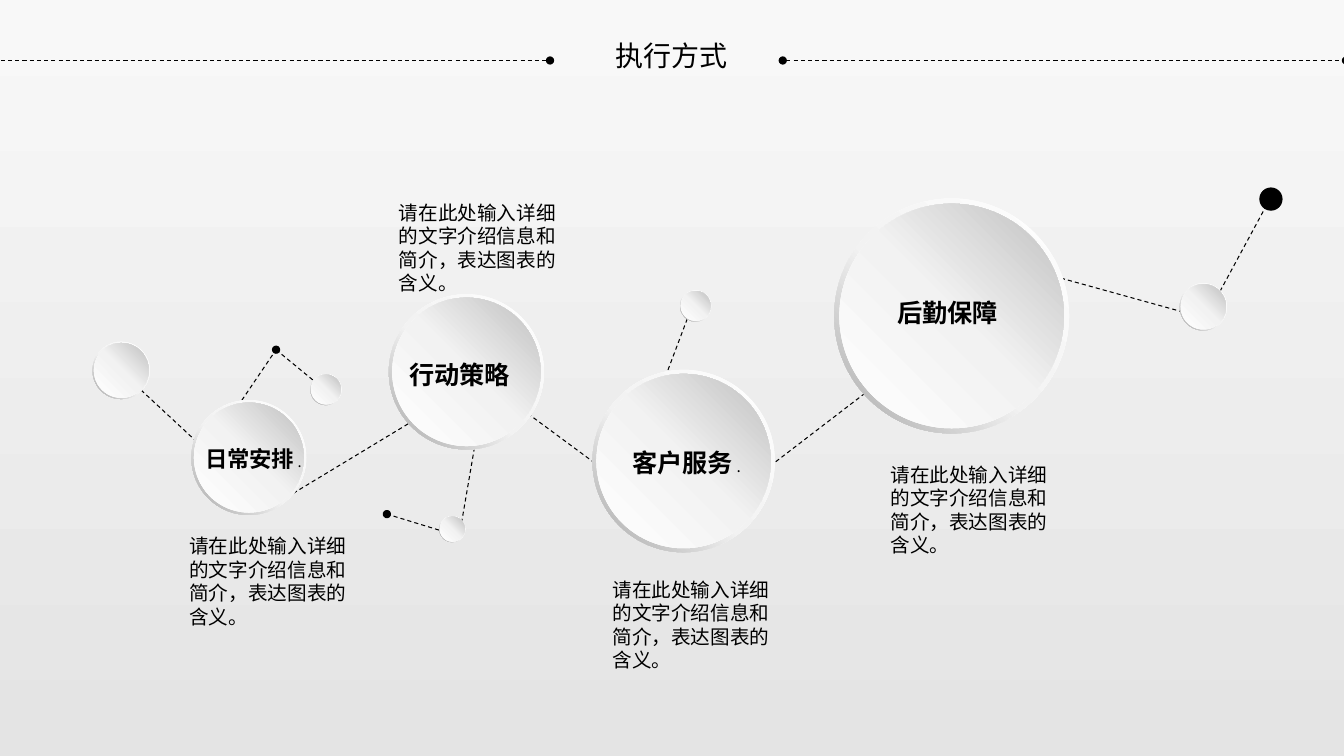
import copy

import pptx
import pptx.dml.color
import pptx.enum.dml
import pptx.enum.shapes
import pptx.enum.text
import pptx.oxml.ns
import pptx.oxml.xmlchemy
import pptx.util

Pt = pptx.util.Pt
qn = pptx.oxml.ns.qn
SHAPES = pptx.enum.shapes.MSO_SHAPE
ALIGN = pptx.enum.text.PP_ALIGN
ANCHOR = pptx.enum.text.MSO_ANCHOR

BLACK = "000000"
RIM = ([(0, "FFFFFF"), (0.55, "F2F2F2"), (1, "A6A6A6")], 135)
FACE = ([(0, "FFFFFF"), (0.51, "F2F2F2"), (1, "BFBFBF")], 315)
CAPTION = "请在此处输入详细的文字介绍信息和简介，表达图表的含义。"


def rgb(value):
    return pptx.dml.color.RGBColor.from_string(value)


def add_xml(parent, tag, **attrs):
    child = pptx.oxml.xmlchemy.OxmlElement(tag)
    for name, value in attrs.items():
        child.set(name, value)
    parent.append(child)


def write_run(p, text, size=14, bold=False, font="Noto Sans CJK SC", color=BLACK):
    r = p.add_run()
    r.text = text
    r.font.size = Pt(size)
    r.font.bold = bold
    r.font.name = font
    r.font.color.rgb = rgb(color)
    add_xml(r._r.get_or_add_rPr(), "a:ea", typeface=font)


def fill_gradient(element, fill, stops, clockwise):
    fill.gradient()
    fill.gradient_angle = (360 - clockwise) % 360
    gs_list = element.find(".//" + qn("a:gsLst"))
    while len(gs_list) < len(stops):
        gs_list.append(copy.deepcopy(gs_list[-1]))
    for stop, (position, color) in zip(fill.gradient_stops, stops):
        stop.position = position
        stop.color.rgb = rgb(color)


class Deck:
    def __init__(self, width, height):
        self.prs = pptx.Presentation()
        self.prs.slide_width, self.prs.slide_height = Pt(width), Pt(height)
        self.s = self.prs.slides.add_slide(self.prs.slide_layouts[6])

    def background(self, stops, clockwise):
        fill_gradient(self.s.element, self.s.background.fill, stops, clockwise)

    def dashed_line(self, x1, y1, x2, y2, dots=False):
        line = self.s.shapes.add_connector(
            pptx.enum.shapes.MSO_CONNECTOR.STRAIGHT, Pt(x1), Pt(y1), Pt(x2), Pt(y2))
        line.line.color.rgb = rgb(BLACK)
        line.line.width = Pt(0.75)
        line.line.dash_style = pptx.enum.dml.MSO_LINE.DASH
        if dots:
            ln = line.element.spPr.find(qn("a:ln"))
            for tag in ("a:headEnd", "a:tailEnd"):
                add_xml(ln, tag, type="oval")
        add_xml(line.element.spPr, "a:effectLst")

    def shape(self, kind, x, y, size, fill):
        sp = self.s.shapes.add_shape(kind, Pt(x), Pt(y), Pt(size), Pt(size))
        sp.shadow.inherit = False
        sp.line.fill.background()
        if isinstance(fill, str):
            sp.fill.solid()
            sp.fill.fore_color.rgb = rgb(fill)
        else:
            fill_gradient(sp.element, sp.fill, *fill)
        return sp

    def bead(self, x, y, size, rim=RIM, face=FACE):
        ring = self.shape(SHAPES.DONUT, x, y, size, rim)
        ring.adjustments[0] = 0.049
        inset = 0.022 * size
        self.shape(SHAPES.OVAL, x + inset, y + inset, size - 2 * inset, face)

    def text(self, x, y, w, h, runs, align=ALIGN.LEFT, anchor=ANCHOR.TOP):
        tf = self.s.shapes.add_textbox(Pt(x), Pt(y), Pt(w), Pt(h)).text_frame
        tf.word_wrap = True
        tf.vertical_anchor = anchor
        p = tf.paragraphs[0]
        p.alignment = align
        p.line_spacing = Pt(1.2 * runs[0][1])
        for text, size, bold in runs:
            write_run(p, text, size=size, bold=bold)


def main():
    deck = Deck(960.48, 540)
    deck.background([(0, "F8F8F8"), (1, "E4E4E4")], 90)

    # Title between two dotted rules
    deck.text(411.8, 20.9, 136.1, 36.7, [("执行方式", 20, False)],
              align=ALIGN.CENTER, anchor=ANCHOR.MIDDLE)
    for x1, x2 in ((-7.2, 393.1), (559.4, 961.9)):
        deck.dashed_line(x1, 43.2, x2, 43.2, dots=True)

    # Links between the beads
    for link in (
        (373, 292.3, 457.9, 355),
        (205.2, 355, 316.1, 288),
        (100.8, 278.6, 140.4, 315.4),
        (197.3, 249.8, 225.4, 272.9),
        (339.1, 319.7, 329.8, 373.7),
        (477.4, 264.2, 491.8, 226.1),
        (554.4, 329.8, 622.1, 277.9),
        (758.2, 198.7, 854.6, 225.4),
        (871.9, 208.1, 905.8, 145.4),
    ):
        deck.dashed_line(*link)
    for link in ((168.5, 292.3, 197.3, 249.8), (321.1, 380.9, 276.5, 367.2)):
        deck.dashed_line(*link, dots=True)

    # Beads: left, top, diameter
    for bead in (
        (66.2, 244.1, 41),
        (221.8, 267.1, 22.3),
        (136.8, 285.8, 82.1),
        (313.9, 368.6, 18.7),
        (277.9, 210.2, 110.9),
        (423.4, 264.2, 130.3),
        (486, 207.4, 22.3),
        (596.2, 141.8, 167.8),
        (843.1, 202.3, 33.8),
    ):
        deck.bead(*bead)
    deck.bead(900, 133.9, 16.6, rim=BLACK, face=BLACK)

    # Bead labels
    for x, y, runs in (
        (121, 314.6, [("日常安排", 16, True), (" .", 10.5, False)]),
        (268.5, 253.4, [("行动策略", 18, True)]),
        (430.6, 316.1, [("客户服务", 18, True), (" .", 11, False)]),
        (617, 208.8, [("后勤保障", 18, True)]),
    ):
        deck.text(x, y, 120.2, 28.8, runs, align=ALIGN.CENTER)

    # Captions
    for x, y in ((128.2, 378), (277.9, 139.7), (430.6, 409), (629.3, 326.9)):
        deck.text(x, y, 137.5, 74.9, [(CAPTION, 14, False)])

    deck.prs.save("out.pptx")


if __name__ == "__main__":
    main()
